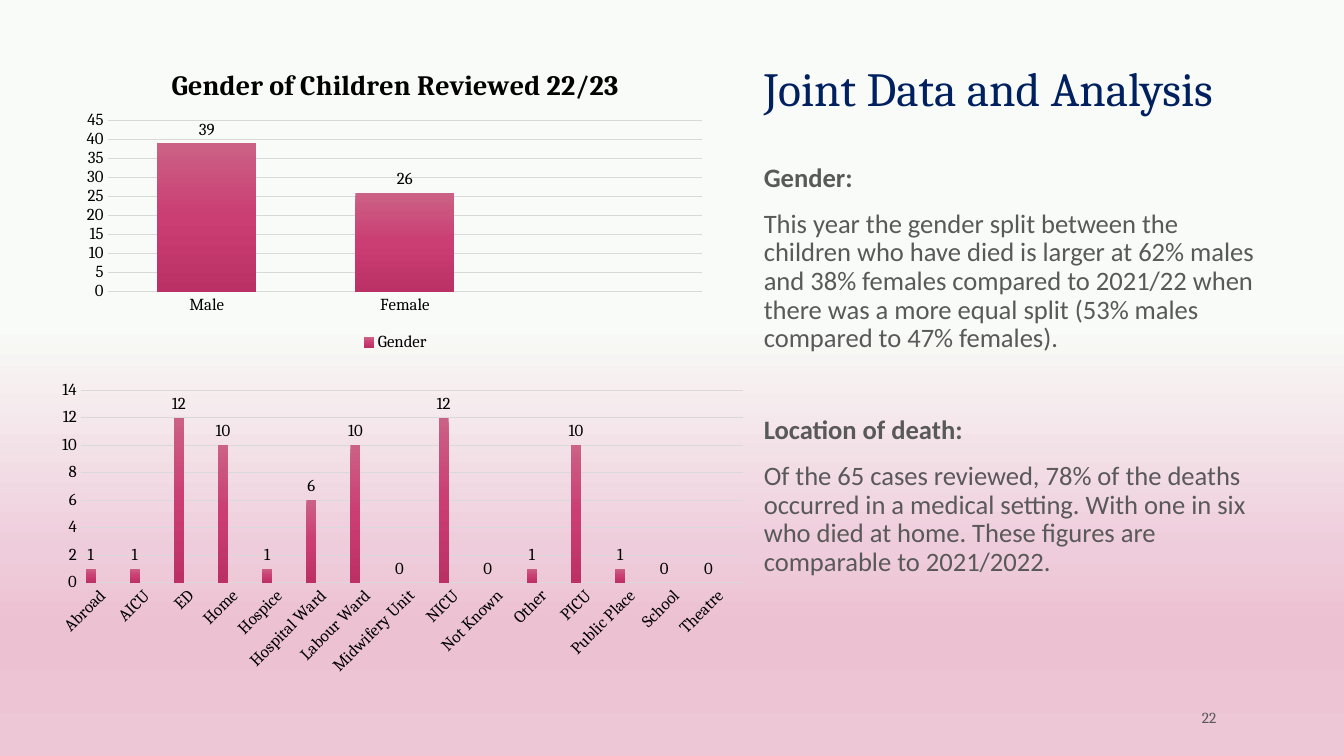
from lxml.etree import SubElement
from pptx import Presentation
from pptx.chart.data import CategoryChartData
from pptx.dml.color import RGBColor
from pptx.enum.chart import (XL_CHART_TYPE, XL_LABEL_POSITION,
                             XL_LEGEND_POSITION, XL_TICK_MARK)
from pptx.enum.text import MSO_ANCHOR, PP_ALIGN
from pptx.oxml import parse_xml
from pptx.oxml.ns import nsdecls, qn
from pptx.util import Pt

PX = 9525  # 96 px to the inch
NAVY = RGBColor(0x00, 0x20, 0x60)
GREY = RGBColor(0x59, 0x59, 0x59)
BLACK = RGBColor(0x00, 0x00, 0x00)
RULE = RGBColor(0xD9, 0xD9, 0xD9)


def rgb(code):
    return RGBColor.from_string(code)


PAPER = [(43, rgb("F8FBF7")), (73, rgb("EFCCDB")),
         (83, rgb("ECC1D1")), (100, rgb("EDC7D6"))]
PINK, CORAL, AMBER = [
    list(zip((0, 50, 100), map(rgb, codes))) for codes in (
        ("CB6185", "CA3E73", "BB3065"),
        ("FC9D7E", "FF8E65", "E57D57"),
        ("FEBB7D", "FFB265", "E59E57"))]


def shade(fill, root, stops):
    """Fill from top to bottom with any number of colour stops."""
    fill.gradient()
    fill.gradient_angle = 270
    group = root.find(".//" + qn("a:gsLst"))
    for old in list(group):
        group.remove(old)
    for at, color in stops:
        stop = SubElement(group, qn("a:gs"), pos=str(at * 1000))
        SubElement(stop, qn("a:srgbClr"), val=str(color))


deck = Presentation()
deck.slide_width, deck.slide_height = 1280 * PX, 720 * PX
slide = deck.slides.add_slide(deck.slide_layouts[6])
shade(slide.background.fill, slide.element, PAPER)

# Text: each paragraph is words, bold, space before
head = {"name": "Cambria", "size": Pt(34)}
copy = {"name": "Calibri", "size": Pt(19)}
small = {"name": "Cambria", "size": Pt(11)}
story = [
    ("Gender:", True, 12),
    ("This year the gender split between the children who have died is "
     "larger at 62% males and 38% females compared to 2021/22 when there was "
     "a more equal split (53% males compared to 47% females).", False, 12),
    ("Location of death:", True, 45),
    ("Of the 65 cases reviewed, 78% of the deaths occurred in a medical "
     "setting. With one in six who died at home. These figures are "
     "comparable to 2021/2022.", False, 12),
]
texts = [
    ((718, 28, 490, 88), [("Joint Data and Analysis", False, 0)],
     head, NAVY, MSO_ANCHOR.BOTTOM, PP_ALIGN.LEFT),
    ((718, 152, 490, 496), story, copy, GREY, MSO_ANCHOR.TOP, PP_ALIGN.LEFT),
    ((1053, 672, 115, 24), [("22", False, 0)],
     small, GREY, MSO_ANCHOR.MIDDLE, PP_ALIGN.RIGHT),
]
for box, paras, style, color, anchor, align in texts:
    frame = slide.shapes.add_textbox(*[n * PX for n in box]).text_frame
    frame.word_wrap = True
    frame.vertical_anchor = anchor
    for i, (words, bold, gap) in enumerate(paras):
        para = frame.add_paragraph() if i else frame.paragraphs[0]
        para.alignment = align
        para.line_spacing = 0.9
        para.space_before = Pt(gap)
        run = para.add_run()
        run.text = words
        for key, val in {**style, "bold": bold}.items():
            setattr(run.font, key, val)
        run.font.color.rgb = color

# Charts: plot is the inner area as shares of the chart
places = ["Abroad", "AICU", "ED", "Home", "Hospice", "Hospital Ward",
          "Labour Ward", "Midwifery Unit", "NICU", "Not Known", "Other",
          "PICU", "Public Place", "School", "Theatre"]
deaths = [1, 1, 12, 10, 1, 6, 10, 0, 12, 0, 1, 10, 1, 0, 0]
blank = [None] * len(places)
charts = [
    {"box": (72, 48, 609, 291), "plot": (0.05, 0.23, 0.93, 0.56),
     "title": "Gender of Children Reviewed 22/23", "legend": True,
     "cats": ["Male", "Female", ""], "top": 45, "step": 5, "turn": 0,
     "rows": [("Gender", [39, 26, None], PINK)]},
    {"box": (43, 357, 678, 291), "plot": (0.05, 0.05, 0.93, 0.63),
     "title": None, "legend": False,
     "cats": places, "top": 14, "step": 2, "turn": -45,
     "rows": [("Series 1", deaths, PINK), ("Series 2", blank, CORAL),
              ("Series 3", blank, AMBER)]},
]
for spec_ in charts:
    data = CategoryChartData()
    data.categories = spec_["cats"]
    for name, vals, stops in spec_["rows"]:
        data.add_series(name, vals)
    chart = slide.shapes.add_chart(
        XL_CHART_TYPE.COLUMN_CLUSTERED,
        *[n * PX for n in spec_["box"]], data).chart
    plot = chart.plots[0]
    for key, val in {"gap_width": 100, "overlap": -24,
                     "vary_by_categories": False}.items():
        setattr(plot, key, val)
    fonts = [chart.font]

    # Title and legend
    chart.has_title = bool(spec_["title"])
    if spec_["title"]:
        frame = chart.chart_title.text_frame
        frame.text = spec_["title"]
        font = frame.paragraphs[0].runs[0].font
        for key, val in {"name": "Cambria", "size": Pt(20),
                         "bold": True}.items():
            setattr(font, key, val)
        font.color.rgb = BLACK
        chart.chart_title.include_in_layout = False
    chart.has_legend = spec_["legend"]
    if spec_["legend"]:
        chart.legend.position = XL_LEGEND_POSITION.BOTTOM
        chart.legend.include_in_layout = False
        fonts.append(chart.legend.font)

    # Axes
    cat, val_ax = chart.category_axis, chart.value_axis
    for key, val in {"minimum_scale": 0, "maximum_scale": spec_["top"],
                     "major_unit": spec_["step"],
                     "has_major_gridlines": True}.items():
        setattr(val_ax, key, val)
    for axis in (cat, val_ax):
        axis.major_tick_mark = axis.minor_tick_mark = XL_TICK_MARK.NONE
        fonts.append(axis.tick_labels.font)
    for line in (cat.format.line, val_ax.major_gridlines.format.line):
        line.color.rgb = RULE
        line.width = Pt(0.75)
    val_ax.format.line.fill.background()
    if spec_["turn"]:
        body = cat._element.find(qn("c:txPr")).find(qn("a:bodyPr"))
        body.set("rot", str(spec_["turn"] * 60000))
        body.set("vert", "horz")

    # Columns and value labels
    for ser, (name, vals, stops) in zip(plot.series, spec_["rows"]):
        shade(ser.format.fill, ser._element, stops)
        ser.invert_if_negative = False
        tags = ser.data_labels
        tags.show_value = True
        tags.position = XL_LABEL_POSITION.OUTSIDE_END
        fonts.append(tags.font)
    for font in fonts:
        for key, val in {"name": "Cambria", "size": Pt(12),
                         "bold": False}.items():
            setattr(font, key, val)
        font.color.rgb = BLACK

    # Inner plot area
    area = chart._chartSpace.find(".//" + qn("c:plotArea"))
    for old in area.findall(qn("c:layout")):
        area.remove(old)
    area.insert(0, parse_xml(
        f'<c:layout {nsdecls("c")}><c:manualLayout>'
        '<c:layoutTarget val="inner"/>'
        '<c:xMode val="edge"/><c:yMode val="edge"/>'
        + "".join(f'<c:{k} val="{n}"/>' for k, n in zip("xywh", spec_["plot"]))
        + '</c:manualLayout></c:layout>'))

deck.save("out.pptx")
